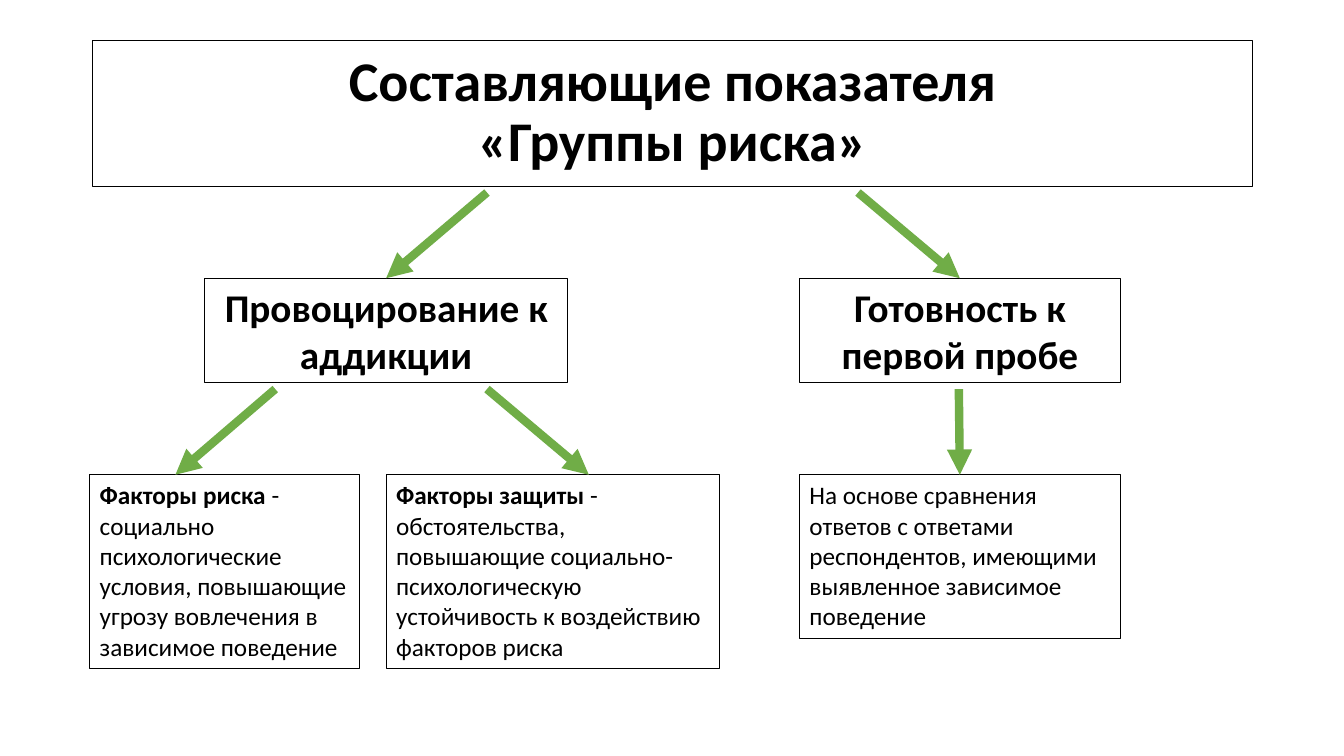
from dataclasses import dataclass

from lxml.etree import SubElement
from pptx import Presentation
from pptx.dml.color import RGBColor
from pptx.enum.shapes import MSO_CONNECTOR
from pptx.enum.text import MSO_ANCHOR, MSO_AUTO_SIZE, PP_ALIGN
from pptx.oxml.ns import qn
from pptx.shapes.autoshape import Shape
from pptx.slide import Slide
from pptx.util import Emu, Pt

EMU_PER_PX = 9144  # 100 px to the inch
FONT = "Calibri"
BLACK = "000000"
GREEN = "70AD47"

# Shared edges of the diagram
LEVEL_TOP = 276
FACTOR_TOP = 471
READINESS_LEFT, READINESS_WIDTH = 793, 318


@dataclass(frozen=True)
class Span:
    text: str
    bold: bool = False


@dataclass(frozen=True)
class Box:
    left: int
    top: int
    width: int
    height: int
    size: int
    align: PP_ALIGN
    spans: tuple[Span, ...]


@dataclass(frozen=True)
class Arrow:
    x1: int
    y1: int
    x2: int
    y2: int


TITLE = Box(92, 40, 1150, 145, 40, PP_ALIGN.CENTER,
            (Span("Составляющие показателя", True), Span("«Группы риска»", True)))

BOXES = (
    Box(203, LEVEL_TOP, 360, 104, 28, PP_ALIGN.CENTER,
        (Span("Провоцирование к аддикции", True),)),
    Box(READINESS_LEFT, LEVEL_TOP, READINESS_WIDTH, 104, 28, PP_ALIGN.CENTER,
        (Span("Готовность к первой пробе", True),)),
    Box(89, FACTOR_TOP, 268, 192, 18, PP_ALIGN.LEFT,
        (Span("Факторы риска ", True),
         Span("- социально психологические условия, повышающие угрозу "
              "вовлечения в зависимое поведение"))),
    Box(383, FACTOR_TOP, 331, 192, 18, PP_ALIGN.LEFT,
        (Span("Факторы защиты ", True),
         Span("- обстоятельства, повышающие социально-психологическую "
              "устойчивость к воздействию факторов риска"))),
    Box(READINESS_LEFT, FACTOR_TOP, READINESS_WIDTH, 162, 18, PP_ALIGN.LEFT,
        (Span("На основе сравнения ответов с ответами респондентов, "
              "имеющими выявленное зависимое поведение"),)),
)

ARROWS = (
    Arrow(483, 191, 383, LEVEL_TOP),
    Arrow(851, 191, 952, LEVEL_TOP),
    Arrow(273, 386, 174, FACTOR_TOP),
    Arrow(483, 386, 584, FACTOR_TOP),
    Arrow(951, 386, 952, FACTOR_TOP),
)


def px(value: int) -> Emu:
    return Emu(value * EMU_PER_PX)


def colour(hex_code: str) -> RGBColor:
    return RGBColor.from_string(hex_code)


def outline(shape: Shape) -> None:
    shape.line.color.rgb = colour(BLACK)
    shape.line.width = Pt(0.75)


def add_span(para, span: Span, size: int) -> None:
    run = para.add_run()
    run.text = span.text
    run.font.name = FONT
    run.font.size = Pt(size)
    run.font.bold = span.bold
    run.font.color.rgb = colour(BLACK)


def fill_title(page: Slide, box: Box) -> None:
    title = page.shapes.title
    title.left, title.top = px(box.left), px(box.top)
    title.width, title.height = px(box.width), px(box.height)
    outline(title)
    frame = title.text_frame
    frame.word_wrap = True
    frame.auto_size = MSO_AUTO_SIZE.NONE
    frame.vertical_anchor = MSO_ANCHOR.MIDDLE
    para = frame.paragraphs[0]
    para.alignment = box.align
    para.line_spacing = 0.9
    for index, span in enumerate(box.spans):
        if index:
            para.add_line_break()
        add_span(para, span, box.size)


def add_box(page: Slide, box: Box) -> None:
    shape = page.shapes.add_textbox(px(box.left), px(box.top),
                                    px(box.width), px(box.height))
    outline(shape)
    frame = shape.text_frame
    frame.word_wrap = True
    frame.auto_size = MSO_AUTO_SIZE.SHAPE_TO_FIT_TEXT
    para = frame.paragraphs[0]
    para.alignment = box.align
    for span in box.spans:
        add_span(para, span, box.size)


def add_arrow(page: Slide, arrow: Arrow) -> None:
    connector = page.shapes.add_connector(
        MSO_CONNECTOR.STRAIGHT,
        px(arrow.x1), px(arrow.y1), px(arrow.x2), px(arrow.y2))
    connector.line.color.rgb = colour(GREEN)
    connector.line.width = Pt(6)
    properties = connector._element.spPr
    SubElement(properties.find(qn("a:ln")), qn("a:tailEnd"), type="triangle")
    SubElement(properties, qn("a:effectLst"))


def main() -> None:
    deck = Presentation()
    deck.slide_width, deck.slide_height = px(1333), px(750)
    page = deck.slides.add_slide(deck.slide_layouts.get_by_name("Title Only"))

    # Heading
    fill_title(page, TITLE)

    # Components and their explanations
    for box in BOXES:
        add_box(page, box)

    # Links between the levels
    for arrow in ARROWS:
        add_arrow(page, arrow)

    deck.save("out.pptx")


if __name__ == "__main__":
    main()
